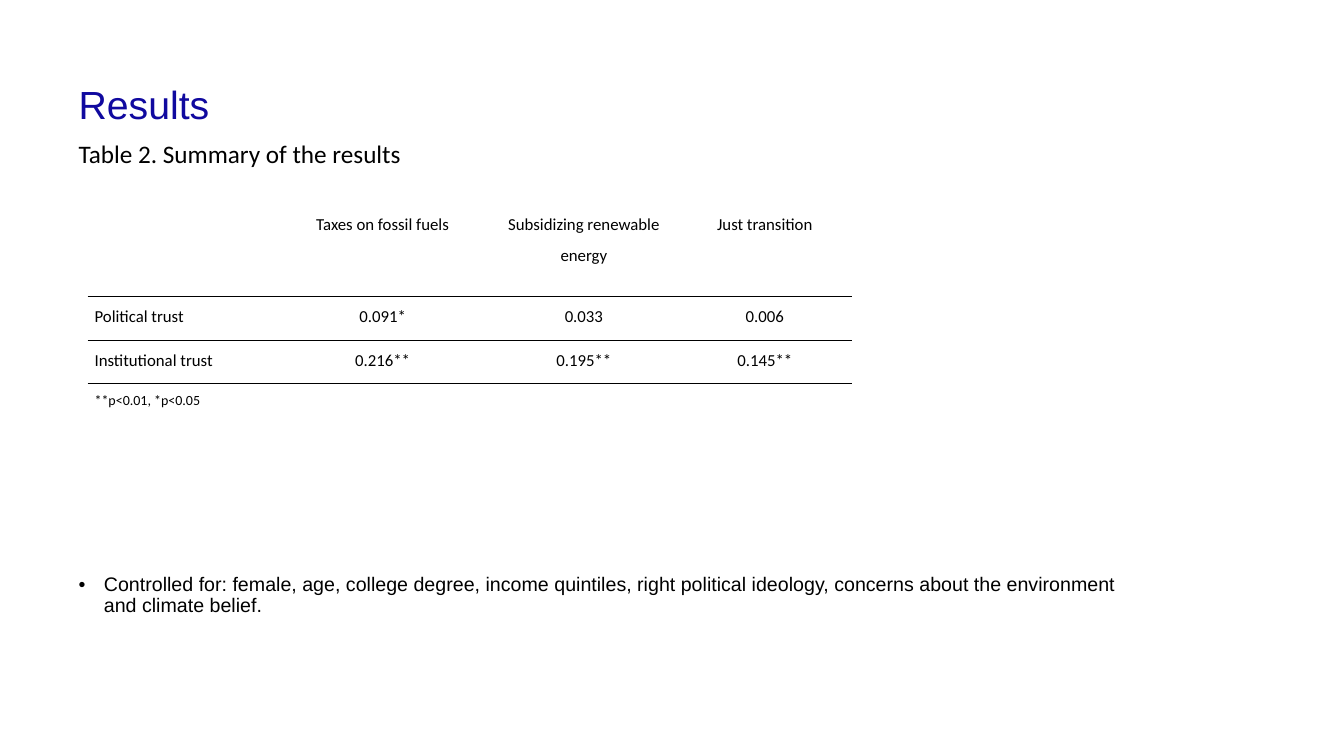
from lxml import etree
from pptx import Presentation
from pptx.dml.color import RGBColor
from pptx.enum.text import MSO_ANCHOR, MSO_AUTO_SIZE, PP_ALIGN
from pptx.oxml.ns import qn
from pptx.util import Pt

CENTER, LEFT, JUSTIFY = PP_ALIGN.CENTER, PP_ALIGN.LEFT, PP_ALIGN.JUSTIFY
BOTTOM, TOP = MSO_ANCHOR.BOTTOM, MSO_ANCHOR.TOP
NO_AUTOFIT = MSO_AUTO_SIZE.NONE

TITLE = "Results"
CAPTION = "Table 2. Summary of the results"
CONTROLS = ("Controlled for: female, age, college degree, income quintiles, right political "
            "ideology, concerns about the environment and climate belief.")
RESULTS = [
    ["", "Taxes on fossil fuels", "Subsidizing renewable energy", "Just transition"],
    ["Political trust", "0.091*", "0.033", "0.006"],
    ["Institutional trust", "0.216**", "0.195**", "0.145**"],
    ["**p<0.01, *p<0.05", "", "", ""],
]
COLUMN_WIDTHS = [134, 153.5, 134, 124.5]
ROW_HEIGHTS = [66, 31, 31, 31]
RULED_ROWS = (0, 2)  # rows with a line below
NOTE_ROW = len(RESULTS) - 1
NO_STYLE = "{2D5ABB26-0587-4C30-8999-92F81FD0307C}"

BLUE, BLACK = "10099F", "000000"
MARGIN_LEFT, TEXT_WIDTH = 49, 766


def color(hex_string):
    return RGBColor.from_string(hex_string)


def place(shape, left, top, width, height):
    shape.left, shape.top, shape.width, shape.height = map(Pt, (left, top, width, height))


def set_font(paragraph, name, size, hex_string):
    paragraph.font.name = name
    paragraph.font.size = Pt(size)
    paragraph.font.color.rgb = color(hex_string)


def add_rule(cell, side):
    """Draw a thin black border on one side of a cell: lnT or lnB."""
    line = etree.SubElement(cell._tc.get_or_add_tcPr(), qn(f"a:{side}"), w=str(Pt(1)))
    fill = etree.SubElement(line, qn("a:solidFill"))
    etree.SubElement(fill, qn("a:srgbClr"), val=BLACK)


def fill_cell(cell, text, row, column):
    if row - 1 in RULED_ROWS:
        add_rule(cell, "lnT")
    if row in RULED_ROWS:
        add_rule(cell, "lnB")
    cell.fill.background()
    cell.margin_left = cell.margin_right = Pt(5)
    cell.margin_top = cell.margin_bottom = 0
    cell.text = text
    paragraph = cell.text_frame.paragraphs[0]
    paragraph.alignment = CENTER if column else JUSTIFY
    paragraph.line_spacing = 1.5
    paragraph.space_after = Pt(8)
    set_font(paragraph, "Calibri", 10 if row == NOTE_ROW else 12, BLACK)


def add_results_table(slide):
    frame = slide.shapes.add_table(len(RESULTS), len(COLUMN_WIDTHS), Pt(62.6), Pt(146),
                                   Pt(sum(COLUMN_WIDTHS)), Pt(sum(ROW_HEIGHTS)))
    table = frame.table
    table.first_row = table.horz_banding = False
    table._tbl.tblPr.find(qn("a:tableStyleId")).text = NO_STYLE
    for column, width in zip(table.columns, COLUMN_WIDTHS):
        column.width = Pt(width)
    for row, height in zip(table.rows, ROW_HEIGHTS):
        row.height = Pt(height)
    for row, texts in enumerate(RESULTS):
        for column, text in enumerate(texts):
            fill_cell(table.cell(row, column), text, row, column)


def main():
    presentation = Presentation()
    presentation.slide_width, presentation.slide_height = Pt(960), Pt(540)
    slide = presentation.slides.add_slide(presentation.slide_layouts[1])
    title, body = slide.placeholders

    place(title, MARGIN_LEFT, 36.7, TEXT_WIDTH, 58.3)
    title.text_frame.text = TITLE
    title.text_frame.vertical_anchor = BOTTOM
    title.text_frame.auto_size = NO_AUTOFIT
    paragraph = title.text_frame.paragraphs[0]
    paragraph.alignment = LEFT
    paragraph.line_spacing = 0.9
    set_font(paragraph, "Arial", 28, BLUE)

    caption = slide.shapes.add_textbox(Pt(MARGIN_LEFT), Pt(95), Pt(248), Pt(51))
    caption.text_frame.text = CAPTION
    set_font(caption.text_frame.paragraphs[0], "Calibri", 18, BLACK)

    place(body, MARGIN_LEFT, 407, TEXT_WIDTH, 95)
    body.text_frame.text = CONTROLS
    body.text_frame.vertical_anchor = TOP
    body.text_frame.auto_size = NO_AUTOFIT
    paragraph = body.text_frame.paragraphs[0]
    paragraph.line_spacing = 0.9
    paragraph.space_before = 0
    properties = paragraph._p.get_or_add_pPr()
    properties.set("marL", str(Pt(18)))
    properties.set("indent", str(Pt(-18)))
    etree.SubElement(properties, qn("a:buChar"), char="•")
    set_font(paragraph, "Arial", 14, BLACK)

    add_results_table(slide)
    presentation.save("out.pptx")


if __name__ == "__main__":
    main()
